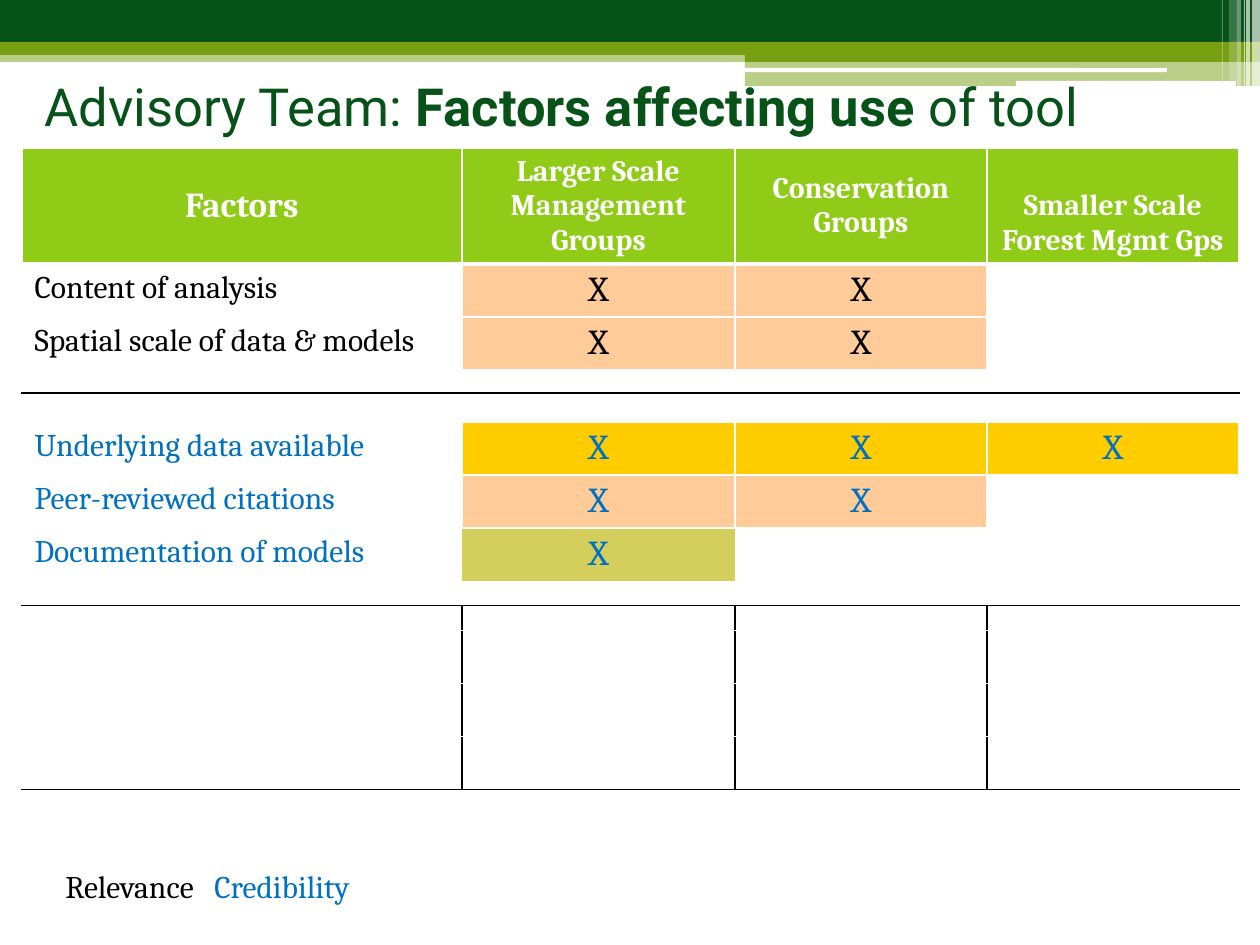
from lxml.etree import SubElement
from pptx import Presentation
from pptx.dml.color import RGBColor
from pptx.enum.shapes import MSO_SHAPE as SHAPE
from pptx.enum.text import MSO_ANCHOR as ANCHOR, PP_ALIGN as ALIGN
from pptx.oxml.ns import qn
from pptx.util import Emu, Pt

DARK, OLIVE, LIME = "065218", "769F11", "8FCB17"
WHITE, BLACK, BLUE = "FFFFFF", "000000", "0070C0"
PEACH, GOLD, KHAKI = "FFCC99", "FFCC00", "D4CF5D"
SERIF, SANS = "Cambria", "Roboto"
NO_STYLE = "{2D5ABB26-0587-4C30-8999-92F81FD0307C}"

BARS = [
    (SHAPE.RECTANGLE, (0, 50, 1260, 12), OLIVE, 50),
    (SHAPE.RECTANGLE, (0, 0, 1260, 42), DARK, 100),
    (SHAPE.RECTANGLE, (0, 42, 1260, 13), OLIVE, 100),
    (SHAPE.RECTANGLE, (745, 49, 515, 13), OLIVE, 100),
    (SHAPE.RECTANGLE, (745, 61, 515, 25), OLIVE, 50),
    (SHAPE.ROUNDED_RECTANGLE, (745, 68, 422, 4), WHITE, 100),
    (SHAPE.ROUNDED_RECTANGLE, (1016, 81, 220, 5), WHITE, 100),
]
STRIPES = [(1252, 8, 86, 65), (1246, 4, 86, 65), (1244, 1, 86, 60),
           (1237, 4, 86, 40), (1229, 8, 81, 20), (1222, 1, 81, 30)]
BARS += [(SHAPE.RECTANGLE, (x, 0, w, h), WHITE, a) for x, w, h, a in STRIPES]

TITLE = [("Advisory Team: ", False), ("Factors affecting use ", True), ("of tool", False)]
HEADER = [("Factors", 20, ANCHOR.MIDDLE),
          ("Larger Scale Management Groups", 17, ANCHOR.MIDDLE),
          ("Conservation Groups", 17, ANCHOR.MIDDLE),
          ("Smaller Scale Forest Mgmt Gps", 17, ANCHOR.BOTTOM)]
FACTORS = {
    1: ("Content of analysis", BLACK, PEACH, 2),
    2: ("Spatial scale of data & models", BLACK, PEACH, 2),
    5: ("Underlying data available", BLUE, GOLD, 3),
    6: ("Peer-reviewed citations", BLUE, PEACH, 2),
    7: ("Documentation of models", BLUE, KHAKI, 1),
}
COLS = [440, 273, 252, 252]
ROWS = [115, 53, 53, 23, 29, 53, 53, 53, 25, 25, 53, 53, 53]
RULED_BELOW = {3, 8, 12}
UNLINED = 7
GRID_START = 9
LEGEND = [("Relevance\t", BLACK), ("Credibility", BLUE)]


def px(n):
    return Emu(round(n * 914400 / 126))


def rgb(value):
    return RGBColor.from_string(value)


def add_run(p, text, color, **font):
    r = p.add_run()
    r.text = text
    r.font.color.rgb = rgb(color)
    for key, value in font.items():
        setattr(r.font, key, value)


def add_bar(shapes, kind, box, color, opacity):
    sp = shapes.add_shape(kind, *map(px, box))
    sp.shadow.inherit = False
    sp.fill.solid()
    sp.fill.fore_color.rgb = rgb(color)
    sp.line.fill.background()
    if opacity < 100:
        clr = sp.fill._xPr.find(qn("a:solidFill"))[0]
        SubElement(clr, qn("a:alpha"), val=str(opacity * 1000))


def fill_cell(cell, color):
    if color:
        cell.fill.solid()
        cell.fill.fore_color.rgb = rgb(color)
    else:
        cell.fill.background()


def edges(row, col):
    if row == UNLINED:
        return {}
    grid = row >= GRID_START
    last = len(COLS) - 1
    lines = {
        "lnL": (BLACK if grid and col > 0 else WHITE, 1),
        "lnR": (BLACK if grid and col < last else WHITE, 1),
        "lnT": (BLACK if row - 1 in RULED_BELOW else WHITE, 3 if row == 1 else 1),
        "lnB": (BLACK if row in RULED_BELOW else WHITE, 3 if row == 0 else 1),
    }
    if row == UNLINED - 1:
        del lines["lnB"]
    if row == UNLINED + 1:
        del lines["lnT"]
    return lines


def draw_edges(cell, lines):
    tcPr = cell._tc.get_or_add_tcPr()
    for i, (tag, (color, width)) in enumerate(lines.items()):
        ln = SubElement(tcPr, qn("a:" + tag), w=str(Pt(width)))
        SubElement(SubElement(ln, qn("a:solidFill")), qn("a:srgbClr"), val=color)
        tcPr.insert(i, ln)


def write_cell(cell, row, col):
    p = cell.text_frame.paragraphs[0]
    fill = None
    if row == 0:
        text, size, cell.vertical_anchor = HEADER[col]
        p.alignment, fill = ALIGN.CENTER, LIME
        add_run(p, text, WHITE, name=SERIF, size=Pt(size), bold=True)
    elif row in FACTORS and col <= FACTORS[row][3]:
        text, color, mark_fill, _ = FACTORS[row]
        if col:
            text, fill, p.alignment = "X", mark_fill, ALIGN.CENTER
        add_run(p, text, color, name=SERIF, size=Pt(20 if col else 18))
    else:
        cell.margin_top = cell.margin_bottom = 0
        SubElement(p._p, qn("a:endParaRPr"), sz="400")
    fill_cell(cell, fill)


def add_factor_table(shapes):
    frame = shapes.add_table(len(ROWS), len(COLS), px(22), px(148),
                             px(sum(COLS)), px(sum(ROWS)))
    table = frame.table
    table.horz_banding = False
    table._tbl.tblPr.find(qn("a:tableStyleId")).text = NO_STYLE
    for column, width in zip(table.columns, COLS):
        column.width = px(width)
    for row, height in enumerate(ROWS):
        table.rows[row].height = px(height)
        for col in range(len(COLS)):
            cell = table.cell(row, col)
            write_cell(cell, row, col)
            draw_edges(cell, edges(row, col))


def add_title(slide):
    title = slide.shapes.title
    box = dict(left=32, top=53, width=1134, height=105)
    for key, value in box.items():
        setattr(title, key, px(value))
    tf = title.text_frame
    tf.vertical_anchor = ANCHOR.MIDDLE
    p = tf.paragraphs[0]
    p.alignment = ALIGN.LEFT
    for text, bold in TITLE:
        add_run(p, text, DARK, name=SANS, size=Pt(30), bold=bold)
    slide.shapes._spTree.append(title._element)


def add_legend(shapes):
    tf = shapes.add_textbox(px(53), px(861), px(340), px(50)).text_frame
    tf.word_wrap = False
    p = tf.paragraphs[0]
    p.alignment = ALIGN.LEFT
    tabs = SubElement(p._p.get_or_add_pPr(), qn("a:tabLst"))
    SubElement(tabs, qn("a:tab"), pos=str(px(149)), algn="l")
    for text, color in LEGEND:
        add_run(p, text, color, name=SERIF, size=Pt(18))


def main():
    prs = Presentation()
    prs.slide_width, prs.slide_height = px(1260), px(945)
    slide = prs.slides.add_slide(prs.slide_layouts[5])
    for bar in BARS:
        add_bar(slide.shapes, *bar)
    add_title(slide)
    add_factor_table(slide.shapes)
    add_legend(slide.shapes)
    prs.save("out.pptx")


if __name__ == "__main__":
    main()
